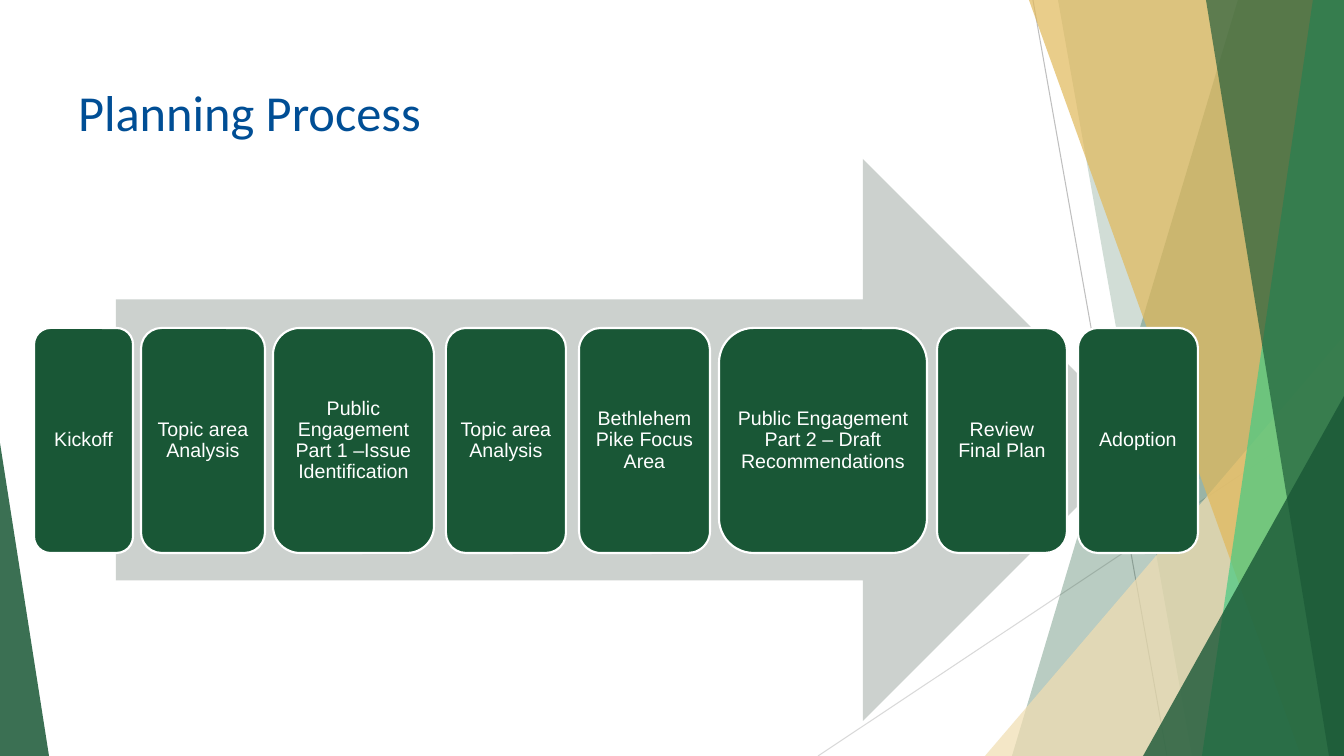
from dataclasses import dataclass

from lxml.etree import SubElement
from pptx import Presentation
from pptx.dml.color import RGBColor
from pptx.enum.shapes import MSO_CONNECTOR, MSO_SHAPE
from pptx.enum.text import MSO_ANCHOR, PP_ALIGN
from pptx.oxml.ns import qn
from pptx.util import Pt

EMU_PER_PX = 914400 / 100.8
SLIDE_WIDTH, SLIDE_HEIGHT = 1344, 756


def px(length):
    return round(length * EMU_PER_PX)


@dataclass(frozen=True)
class Theme:
    green: str = "195736"
    mint: str = "46CA83"
    gold: str = "E1B859"
    sand: str = "F1DEB2"
    arrow: str = "CCD1CE"
    white: str = "FFFFFF"
    title: str = "004E95"
    dark_rule: str = "BFBFBF"
    light_rule: str = "D9D9D9"
    title_font: str = "Calibri"
    step_font: str = "Arial"
    title_size: int = 36
    step_size: int = 14


class SlideBuilder:
    def __init__(self, slide, theme):
        self.slide = slide
        self.shapes = slide.shapes
        self.theme = theme

    def paint(self, shape, color, opacity=100):
        """Give a shape a flat fill with no outline or shadow."""
        shape.shadow.inherit = False
        shape.line.fill.background()
        shape.fill.solid()
        shape.fill.fore_color.rgb = RGBColor.from_string(color)
        if opacity < 100:
            color_element = shape._element.spPr.find(qn("a:solidFill"))[0]
            SubElement(color_element, qn("a:alpha"), val=str(opacity * 1000))
        return shape

    def preset(self, kind, box, color, opacity=100):
        shape = self.shapes.add_shape(kind, *map(px, box))
        return self.paint(shape, color, opacity)

    def triangle(self, box, apex, color, opacity):
        """Draw a triangle whose apex is a fraction of the width from the left."""
        shape = self.preset(MSO_SHAPE.ISOSCELES_TRIANGLE, box, color, opacity)
        shape.adjustments[0] = apex

    def edge_band(self, top_x, bottom_x, color, opacity):
        """Fill from a slanted left edge to the right side of the slide."""
        builder = self.shapes.build_freeform(top_x, 0, scale=EMU_PER_PX)
        builder.add_line_segments([(SLIDE_WIDTH, 0), (SLIDE_WIDTH, SLIDE_HEIGHT),
                                   (bottom_x, SLIDE_HEIGHT)])
        self.paint(builder.convert_to_shape(), color, opacity)

    def rule(self, start, end, color):
        connector = self.shapes.add_connector(
            MSO_CONNECTOR.STRAIGHT, *map(px, start + end))
        connector.line.color.rgb = RGBColor.from_string(color)
        connector.line.width = Pt(0.75)
        SubElement(connector._element.spPr, qn("a:effectLst"))

    def set_text(self, shape, text, font, size, color, alignment):
        paragraph = shape.text_frame.paragraphs[0]
        paragraph.text = text
        paragraph.alignment = alignment
        paragraph.font.name = font
        paragraph.font.size = Pt(size)
        paragraph.font.color.rgb = RGBColor.from_string(color)
        return paragraph

    def title(self, text, box):
        """Place the title above the shapes drawn so far."""
        title = self.shapes.title
        title.left, title.top, title.width, title.height = map(px, box)
        title.text_frame.vertical_anchor = MSO_ANCHOR.TOP
        theme = self.theme
        self.set_text(title, text, theme.title_font, theme.title_size,
                      theme.title, PP_ALIGN.LEFT)
        title._element.getparent().append(title._element)

    def step(self, text, left, width):
        theme = self.theme
        shape = self.preset(MSO_SHAPE.ROUNDED_RECTANGLE,
                            (left, 328, width, 225), theme.green)
        shape.line.color.rgb = RGBColor.from_string(theme.white)
        shape.line.width = Pt(1.5)
        frame = shape.text_frame
        frame.word_wrap = True
        frame.vertical_anchor = MSO_ANCHOR.MIDDLE
        frame.margin_left = frame.margin_right = px(6)
        frame.margin_top = frame.margin_bottom = px(6)
        paragraph = self.set_text(shape, text, theme.step_font, theme.step_size,
                                  theme.white, PP_ALIGN.CENTER)
        paragraph.line_spacing = 0.9


def draw_backdrop(builder):
    theme = builder.theme
    builder.rule((1033, 0), (1167, SLIDE_HEIGHT), theme.dark_rule)
    builder.rule((SLIDE_WIDTH, 406), (818, SLIDE_HEIGHT), theme.light_rule)
    builder.edge_band(1238, 1012, theme.green, 30)
    builder.edge_band(1058, 1192, theme.green, 20)
    builder.triangle((985, 336, 359, 420), 1, theme.sand, 72)
    builder.edge_band(1029, 1301, theme.gold, 70)
    builder.edge_band(1313, 1202, theme.mint, 70)
    builder.edge_band(1206, 1329, theme.green, 65)
    builder.triangle((1143, 396, 201, 360), 1, theme.green, 80)
    builder.triangle((0, 443, 49, 313), 0, theme.green, 85)


def draw_process(builder):
    builder.preset(MSO_SHAPE.RIGHT_ARROW, (116, 159, 1028, 562),
                   builder.theme.arrow)
    steps = [
        ("Kickoff", 34, 99),
        ("Topic area Analysis", 141, 124),
        ("Public Engagement Part 1 –Issue Identification", 273, 161),
        ("Topic area Analysis", 446, 120),
        ("Bethlehem Pike Focus Area", 579, 131),
        ("Public Engagement Part 2 – Draft Recommendations", 719, 208),
        ("Review Final Plan", 937, 130),
        ("Adoption", 1078, 120),
    ]
    for text, left, width in steps:
        builder.step(text, left, width)


def main():
    presentation = Presentation()
    presentation.slide_width = px(SLIDE_WIDTH)
    presentation.slide_height = px(SLIDE_HEIGHT)
    title_only = presentation.slide_layouts.get_by_name("Title Only")
    builder = SlideBuilder(presentation.slides.add_slide(title_only), Theme())
    draw_backdrop(builder)
    builder.title("Planning Process", (68, 76, 948, 145))
    draw_process(builder)
    presentation.save("out.pptx")


if __name__ == "__main__":
    main()
